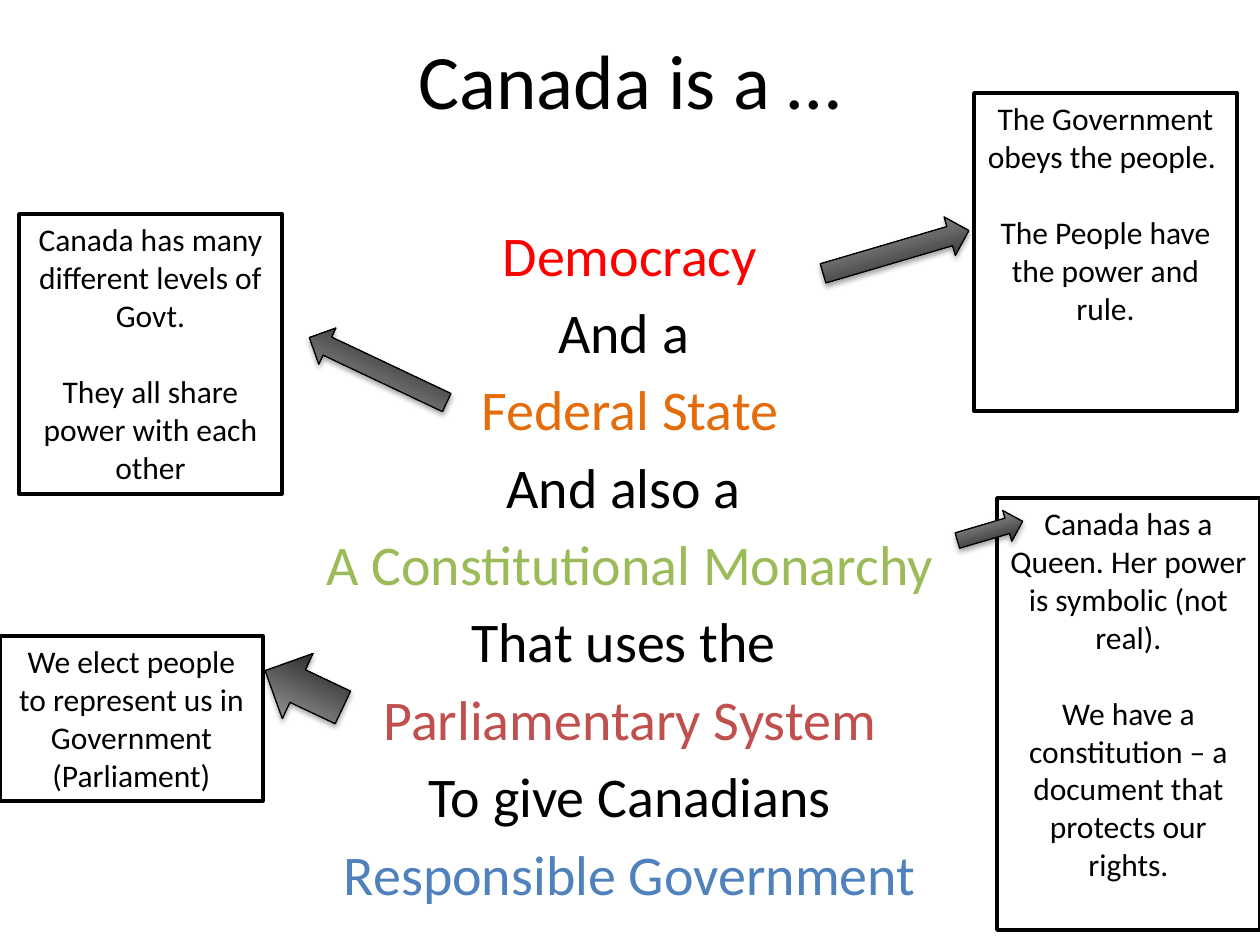
from dataclasses import dataclass

from lxml import etree
from pptx import Presentation
from pptx.dml.color import RGBColor
from pptx.enum.shapes import MSO_SHAPE
from pptx.enum.text import MSO_ANCHOR, PP_ALIGN
from pptx.oxml.ns import qn
from pptx.util import Emu, Pt

RECTANGLE = MSO_SHAPE.RECTANGLE
RIGHT_ARROW = MSO_SHAPE.RIGHT_ARROW
CENTER = PP_ALIGN.CENTER
TOP, MIDDLE = MSO_ANCHOR.TOP, MSO_ANCHOR.MIDDLE

PX_PER_INCH = 126
PAGE_WIDTH, PAGE_HEIGHT = 1260, 945
FONT = "Calibri"
COLORS = {
    "black": "000000",
    "white": "FFFFFF",
    "gray": "BDBDBD",
    "red": "FF0000",
    "orange": "E46C0A",
    "green": "9BBB59",
    "brick": "C0504D",
    "blue": "4F81BD",
}


@dataclass
class Area:
    left: int
    top: int
    width: int
    height: int


@dataclass
class Line:
    text: str
    color: str = "black"


@dataclass
class Arrow:
    area: Area
    rotation: float


@dataclass
class Note:
    area: Area
    texts: list[str]
    arrow: Arrow


UP_RIGHT, UP_LEFT = 343.6, 205.3

STATEMENT = [
    Line("Democracy", "red"),
    Line("And a "),
    Line("Federal State", "orange"),
    Line("And also a "),
    Line("A Constitutional Monarchy", "green"),
    Line("That uses the "),
    Line("Parliamentary System", "brick"),
    Line("To give Canadians"),
    Line("Responsible Government", "blue"),
]

NOTES = [
    Note(Area(974, 93, 263, 318),
         ["The Government obeys the people. ",
          "The People have the power and rule."],
         Arrow(Area(820, 232, 152, 40), UP_RIGHT)),
    Note(Area(19, 214, 263, 280),
         ["Canada has many different levels of Govt.",
          "They all share power with each other"],
         Arrow(Area(302, 350, 152, 40), UP_LEFT)),
    Note(Area(997, 498, 263, 432),
         ["Canada has a Queen. Her power is symbolic (not real).",
          "We have a constitution – a document that protects our rights."],
         Arrow(Area(956, 515, 68, 32), UP_RIGHT)),
    Note(Area(0, 636, 263, 165),
         ["We elect people to represent us in Government (Parliament)"],
         Arrow(Area(261, 653, 86, 72), UP_LEFT)),
]


def px(length: int) -> Emu:
    return Emu(round(length * 914400 / PX_PER_INCH))


def bounds(area: Area) -> tuple[Emu, ...]:
    return px(area.left), px(area.top), px(area.width), px(area.height)


def rgb(name: str) -> RGBColor:
    return RGBColor.from_string(COLORS[name])


def write(frame, lines: list[Line], size: int, gap: float = 0, anchor=TOP) -> None:
    """Fill a text frame with centred lines, parted by a gap in points."""
    frame.word_wrap = True
    frame.vertical_anchor = anchor
    for index, line in enumerate(lines):
        para = frame.add_paragraph() if index else frame.paragraphs[0]
        para.alignment = CENTER
        para.space_before = Pt(gap if index else 0)
        span = para.add_run()
        span.text = line.text
        span.font.name = FONT
        span.font.size = Pt(size)
        span.font.color.rgb = rgb(line.color)


def add_outlined(page, kind, area: Area, line_width: float):
    shape = page.shapes.add_shape(kind, *bounds(area))
    shape.shadow.inherit = False
    shape.line.color.rgb = rgb("black")
    shape.line.width = Pt(line_width)
    return shape


def add_arrow(page, arrow: Arrow) -> None:
    shape = add_outlined(page, RIGHT_ARROW, arrow.area, 0.75)
    shape.rotation = arrow.rotation
    shape.fill.gradient()
    shape.fill.gradient_angle = 90
    for stop, color in zip(shape.fill.gradient_stops, ("black", "gray")):
        stop.color.rgb = rgb(color)
    # Soft shadow below the arrow
    effects = shape.element.spPr.find(qn("a:effectLst"))
    shadow = etree.SubElement(effects, qn("a:outerShdw"), blurRad=str(Pt(3.1)),
                              dist=str(Pt(1.8)), dir="5400000", rotWithShape="0")
    tint = etree.SubElement(shadow, qn("a:srgbClr"), val=COLORS["black"])
    etree.SubElement(tint, qn("a:alpha"), val="35000")


def add_note(page, note: Note) -> None:
    box = add_outlined(page, RECTANGLE, note.area, 2)
    box.fill.solid()
    box.fill.fore_color.rgb = rgb("white")
    write(box.text_frame, [Line(text) for text in note.texts], 18, gap=22)
    add_arrow(page, note.arrow)


def main() -> None:
    deck = Presentation()
    deck.slide_width, deck.slide_height = px(PAGE_WIDTH), px(PAGE_HEIGHT)
    page = deck.slides.add_slide(deck.slide_layouts[6])

    # Statement down the middle
    body = page.shapes.add_textbox(*bounds(Area(0, 134, PAGE_WIDTH, 811)))
    body.text_frame.margin_top = px(86)
    write(body.text_frame, STATEMENT, 32, gap=5.8)

    # Title
    title = page.shapes.add_textbox(*bounds(Area(0, 0, PAGE_WIDTH, 158)))
    write(title.text_frame, [Line("Canada is a …")], 44, anchor=MIDDLE)

    # Notes with their arrows
    for note in NOTES:
        add_note(page, note)

    deck.save("out.pptx")


if __name__ == "__main__":
    main()
